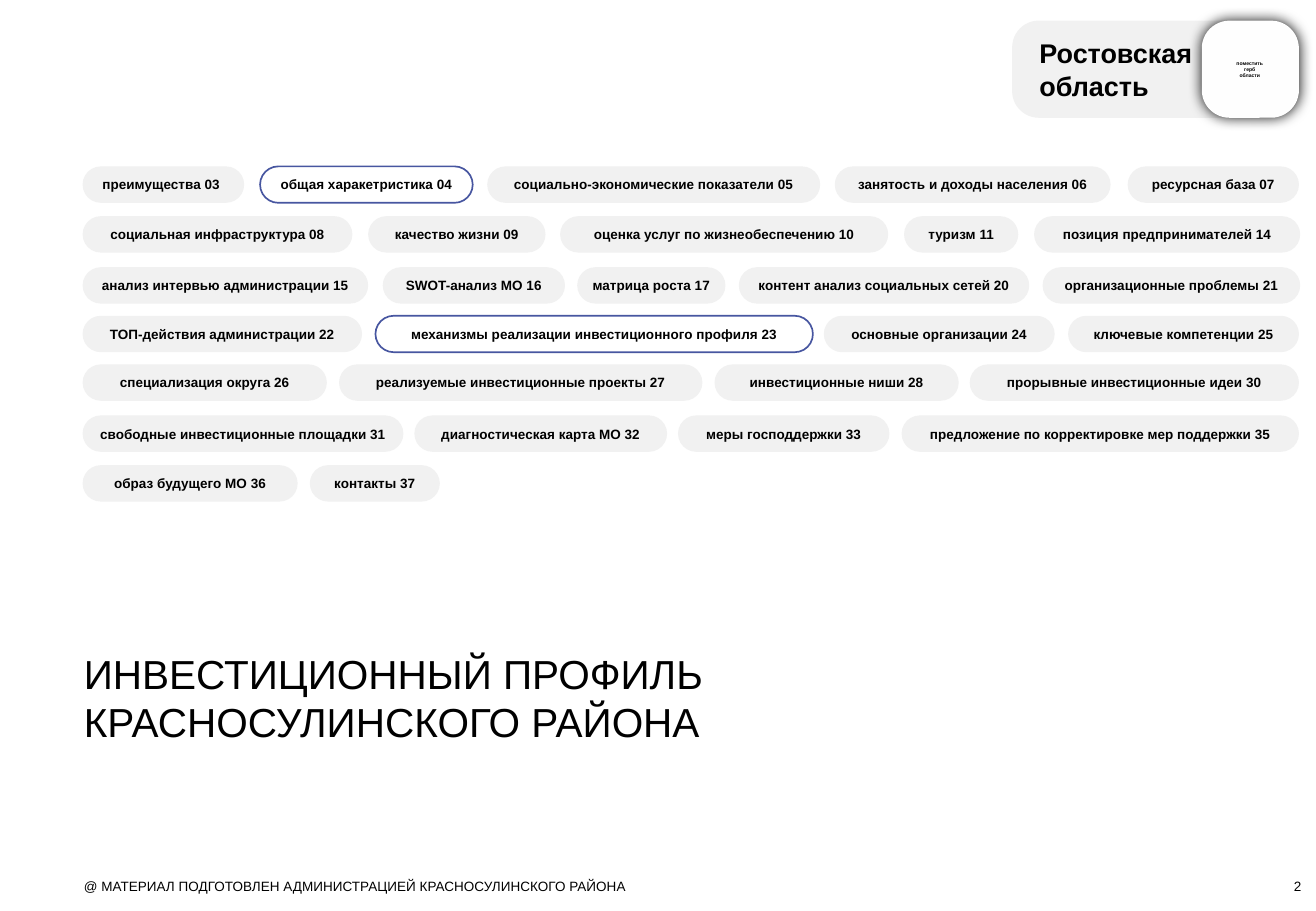
from lxml import etree
from pptx import Presentation
from pptx.dml.color import RGBColor
from pptx.enum.shapes import MSO_SHAPE
from pptx.enum.text import MSO_ANCHOR, PP_ALIGN
from pptx.oxml.ns import qn
from pptx.util import Inches, Pt

ROUND = MSO_SHAPE.ROUNDED_RECTANGLE
LEFT, CENTER, RIGHT = PP_ALIGN.LEFT, PP_ALIGN.CENTER, PP_ALIGN.RIGHT
TOP, MIDDLE, BOTTOM = MSO_ANCHOR.TOP, MSO_ANCHOR.MIDDLE, MSO_ANCHOR.BOTTOM
FONT = "Arial"
COLORS = {"text": "000000", "tile": "F1F1F1", "outline": "4756A0",
          "emblem": "FEFEFE", "shadow": "000000"}
PILL_HEIGHT = 0.3
OUTLINED = {"общая харакетристика 04",
            "механизмы реализации инвестиционного профиля 23"}
MENU = [
    (1.37, [("преимущества 03", 0.68, 1.33),
            ("общая харакетристика 04", 2.14, 1.75),
            ("социально-экономические показатели 05", 4.01, 2.74),
            ("занятость и доходы населения 06", 6.87, 2.27),
            ("ресурсная база 07", 9.28, 1.41)]),
    (1.78, [("социальная инфраструктура 08", 0.68, 2.22),
            ("качество жизни 09", 3.03, 1.46),
            ("оценка услуг по жизнеобеспечению 10", 4.61, 2.7),
            ("туризм 11", 7.44, 0.94),
            ("позиция предпринимателей 14", 8.51, 2.19)]),
    (2.2, [("анализ интервью администрации 15", 0.68, 2.35),
           ("SWOT-анализ МО 16", 3.15, 1.5),
           ("матрица роста 17", 4.75, 1.22),
           ("контент анализ социальных сетей 20", 6.08, 2.39),
           ("организационные проблемы 21", 8.58, 2.12)]),
    (2.6, [("ТОП-действия администрации 22", 0.68, 2.3),
           ("механизмы реализации инвестиционного профиля 23", 3.09, 3.6),
           ("основные организации 24", 6.78, 1.9),
           ("ключевые компетенции 25", 8.79, 1.9)]),
    (3.0, [("специализация округа 26", 0.68, 2.01),
           ("реализуемые инвестиционные проекты 27", 2.79, 2.99),
           ("инвестиционные ниши 28", 5.88, 2.01),
           ("прорывные инвестиционные идеи 30", 7.98, 2.71)]),
    (3.42, [("свободные инвестиционные площадки 31", 0.68, 2.64),
            ("диагностическая карта МО 32", 3.41, 2.08),
            ("меры господдержки 33", 5.58, 1.74),
            ("предложение по корректировке мер поддержки 35", 7.42, 3.27)]),
    (3.83, [("образ будущего МО 36", 0.68, 1.77),
            ("контакты 37", 2.55, 1.07)]),
]


def rgb(name):
    """Return the named colour."""
    return RGBColor.from_string(COLORS[name])


def set_text(sp, text, size=8, bold=False, align=LEFT, anchor=TOP, insets=(0, 0, 0, 0)):
    """Write one formatted paragraph into a shape."""
    tf = sp.text_frame
    tf.word_wrap = True
    tf.vertical_anchor = anchor
    tf.margin_left, tf.margin_top, tf.margin_right, tf.margin_bottom = map(Inches, insets)
    p = tf.paragraphs[0]
    p.alignment = align
    r = p.add_run()
    r.text = text
    r.font.name = FONT
    r.font.size = Pt(size)
    r.font.bold = bold
    r.font.color.rgb = rgb("text")


def add_label(s, text, box, **fmt):
    """Add a text box."""
    set_text(s.shapes.add_textbox(*map(Inches, box)), text, **fmt)


def add_tile(s, box, radius, fill=None, outline=None):
    """Add a rounded tile and return it."""
    sp = s.shapes.add_shape(ROUND, *map(Inches, box))
    sp.adjustments[0] = radius
    sp.shadow.inherit = False
    if fill:
        sp.fill.solid()
        sp.fill.fore_color.rgb = rgb(fill)
    else:
        sp.fill.background()
    if outline:
        sp.line.color.rgb = rgb(outline)
        sp.line.width = Pt(1)
    else:
        sp.line.fill.background()
    return sp


def add_glow_shadow(sp, blur, alpha):
    """Add a centred blurred shadow to a shape."""
    effects = sp._element.spPr.find(qn("a:effectLst"))
    shadow = etree.SubElement(effects, qn("a:outerShdw"), blurRad=str(Pt(blur)),
                              dist="0", dir="0", algn="ctr", rotWithShape="0")
    color = etree.SubElement(shadow, qn("a:srgbClr"), val=COLORS["shadow"])
    etree.SubElement(color, qn("a:alpha"), val=str(alpha * 1000))


def add_menu(s):
    """Add the rows of section pills."""
    for top, pills in MENU:
        for text, left, width in pills:
            style = {"outline": "outline"} if text in OUTLINED else {"fill": "tile"}
            sp = add_tile(s, (left, top, width, PILL_HEIGHT), 0.5, **style)
            first = text == MENU[0][1][0][0]
            set_text(sp, text, bold=True, anchor=MIDDLE,
                     align=LEFT if first else CENTER,
                     insets=(0.12 if first else 0, 0, 0, 0))


def add_region(s):
    """Add the region tile with the emblem placeholder."""
    sp = add_tile(s, (8.33, 0.17, 2.36, 0.8), 0.275, fill="tile")
    set_text(sp, "Ростовская область", size=16, bold=True, anchor=MIDDLE,
             insets=(0.16, 0.05, 0.79, 0.05))
    emblem = add_tile(s, (9.89, 0.17, 0.8, 0.8), 0.286, fill="emblem")
    add_glow_shadow(emblem, 8.4, 92)
    add_label(s, "поместить герб области", (10.16, 0.5, 0.25, 0.15),
              size=3, bold=True, align=CENTER)


def main():
    """Build the slide and save it."""
    prs = Presentation()
    prs.slide_width, prs.slide_height = Inches(10.83), Inches(7.5)
    s = prs.slides.add_slide(prs.slide_layouts[6])
    add_menu(s)
    add_region(s)
    add_label(s, "ИНВЕСТИЦИОННЫЙ ПРОФИЛЬ КРАСНОСУЛИНСКОГО РАЙОНА",
              (0.69, 5.34, 8, 0.81), size=24)
    add_label(s, "@ МАТЕРИАЛ ПОДГОТОВЛЕН АДМИНИСТРАЦИЕЙ КРАСНОСУЛИНСКОГО РАЙОНА",
              (0.69, 7.23, 8, 0.13))
    add_label(s, "2", (9.91, 7.23, 0.8, 0.13), align=RIGHT, anchor=BOTTOM)
    prs.save("out.pptx")


if __name__ == "__main__":
    main()
